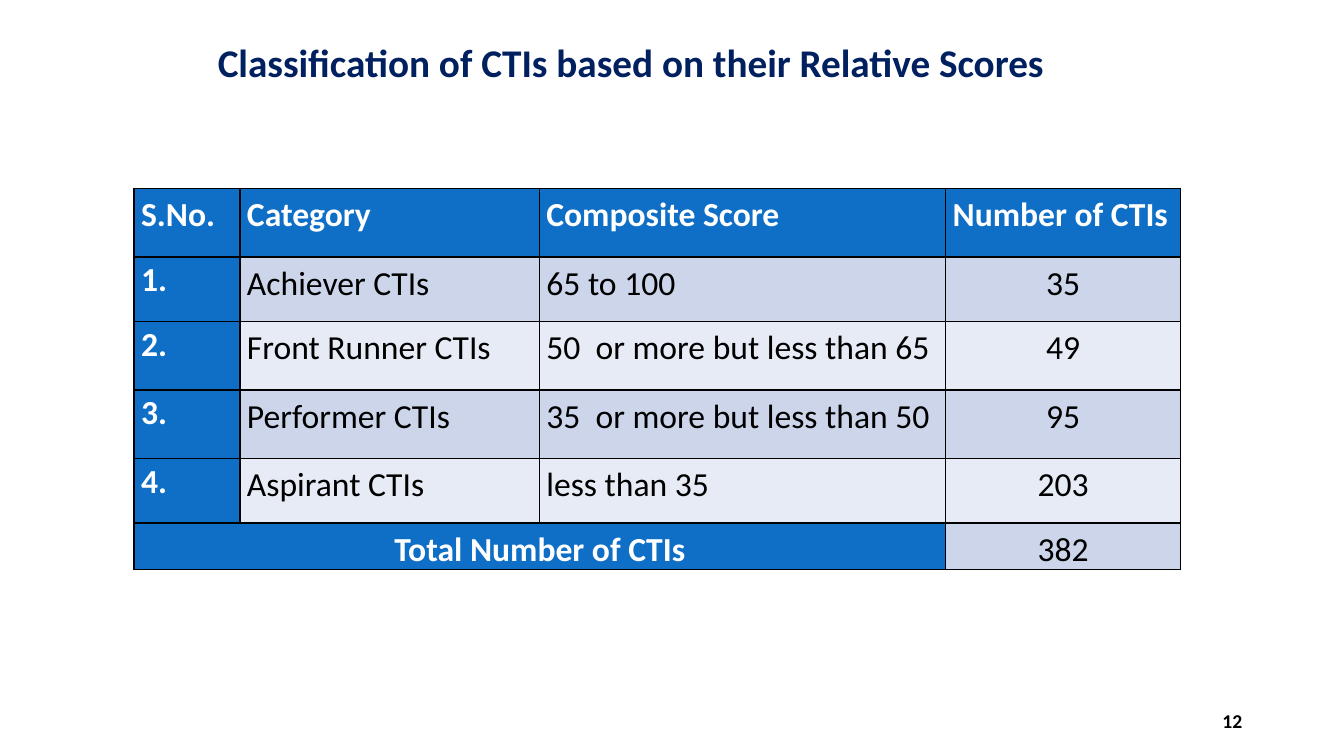
"""Build the slide that classifies CTIs by their relative scores."""
from dataclasses import dataclass

from lxml.etree import SubElement
from pptx import Presentation
from pptx.dml.color import RGBColor
from pptx.enum.text import MSO_ANCHOR as Anchor, MSO_AUTO_SIZE as AutoSize, PP_ALIGN as Align
from pptx.oxml.ns import qn
from pptx.slide import Slide
from pptx.table import _Cell as Cell
from pptx.text.text import TextFrame
from pptx.util import Pt

EMU_PER_PX = 9144


@dataclass(frozen=True)
class Theme:
    font: str = "Calibri"
    navy: str = "002060"
    blue: str = "0F6FC6"
    band_dark: str = "CCD5EA"
    band_light: str = "E7EBF5"
    white: str = "FFFFFF"
    black: str = "000000"
    title_size: int = 28
    table_size: int = 24
    number_size: int = 14
    border_width: int = 1


@dataclass(frozen=True)
class Category:
    number: str
    name: str
    score: str
    count: str


@dataclass(frozen=True)
class Label:
    text: str
    box: tuple[int, int, int, int]
    size: int
    color: str
    align: Align
    anchor: Anchor
    auto_size: AutoSize


THEME = Theme()
LABELS = (
    Label("Classification of CTIs based on their Relative Scores", (191, 33, 869, 57),
          THEME.title_size, THEME.navy, Align.CENTER, Anchor.TOP, AutoSize.SHAPE_TO_FIT_TEXT),
    Label("12", (942, 695, 300, 40),
          THEME.number_size, THEME.black, Align.RIGHT, Anchor.MIDDLE, AutoSize.NONE),
)
HEADINGS = ("S.No.", "Category", "Composite Score", "Number of CTIs")
CATEGORIES = (
    Category("1.", "Achiever CTIs", "65 to 100", "35"),
    Category("2.", "Front Runner CTIs", "50  or more but less than 65", "49"),
    Category("3.", "Performer CTIs", "35  or more but less than 50", "95"),
    Category("4.", "Aspirant CTIs", "less than 35", "203"),
)
COLUMN_WIDTHS = (105, 297, 403, 233)
ROW_HEIGHTS = (68, 64, 68, 68, 64, 46)
TABLE_LEFT, TABLE_TOP = 133, 187
CELL_MARGIN = 7


def px(length: int) -> int:
    return length * EMU_PER_PX


def write(frame: TextFrame, text: str, *, size: int, color: str, bold: bool = True,
          align: Align = Align.LEFT, line_spacing: float = 1.0, space_after: int = 0) -> None:
    paragraph = frame.paragraphs[0]
    paragraph.alignment = align
    paragraph.line_spacing = line_spacing
    paragraph.space_after = Pt(space_after)
    run = paragraph.add_run()
    run.text = text
    run.font.name = THEME.font
    run.font.size = Pt(size)
    run.font.bold = bold
    run.font.color.rgb = RGBColor.from_string(color)


def add_label(slide: Slide, label: Label) -> None:
    frame = slide.shapes.add_textbox(*map(px, label.box)).text_frame
    frame.word_wrap = True
    frame.auto_size = label.auto_size
    frame.vertical_anchor = label.anchor
    write(frame, label.text, size=label.size, color=label.color, align=label.align)


def style_cell(cell: Cell, fill: str) -> None:
    cell.margin_left = cell.margin_right = px(CELL_MARGIN)
    cell.margin_top = cell.margin_bottom = 0
    properties = cell._tc.get_or_add_tcPr()
    for side in ("a:lnL", "a:lnR", "a:lnT", "a:lnB"):
        line = SubElement(properties, qn(side), w=str(Pt(THEME.border_width)))
        SubElement(SubElement(line, qn("a:solidFill")), qn("a:srgbClr"), val=THEME.black)
    cell.fill.solid()
    cell.fill.fore_color.rgb = RGBColor.from_string(fill)


def fill_cell(cell: Cell, text: str, *, heading: bool = False, align: Align = Align.JUSTIFY,
              line_spacing: float = 1.15, space_after: int = 10) -> None:
    write(cell.text_frame, text, size=THEME.table_size, bold=heading, align=align,
          color=THEME.white if heading else THEME.black,
          line_spacing=line_spacing, space_after=space_after)


def add_score_table(slide: Slide) -> None:
    box = (TABLE_LEFT, TABLE_TOP, sum(COLUMN_WIDTHS), sum(ROW_HEIGHTS))
    rows, columns = len(ROW_HEIGHTS), len(COLUMN_WIDTHS)
    table = slide.shapes.add_table(rows, columns, *map(px, box)).table
    for column, width in zip(table.columns, COLUMN_WIDTHS):
        column.width = px(width)
    for row, height in zip(table.rows, ROW_HEIGHTS):
        row.height = px(height)

    total_row, count_column = rows - 1, columns - 1
    for row in range(rows):
        band = THEME.band_dark if row % 2 else THEME.band_light
        for column in range(columns):
            is_heading = (row == 0 or column == 0
                          or (row == total_row and column < count_column))
            style_cell(table.cell(row, column), THEME.blue if is_heading else band)

    for column, heading in enumerate(HEADINGS):
        fill_cell(table.cell(0, column), heading, heading=True,
                  align=Align.JUSTIFY if column else Align.LEFT)
    for row, category in enumerate(CATEGORIES, start=1):
        fill_cell(table.cell(row, 0), category.number, heading=True, align=Align.LEFT,
                  line_spacing=1.07, space_after=0)
        fill_cell(table.cell(row, 1), category.name)
        fill_cell(table.cell(row, 2), category.score)
        fill_cell(table.cell(row, count_column), category.count, align=Align.CENTER)

    total = table.cell(total_row, 0)
    total.merge(table.cell(total_row, count_column - 1))
    fill_cell(total, "Total Number of CTIs", heading=True, align=Align.CENTER)
    fill_cell(table.cell(total_row, count_column), "382", align=Align.CENTER)


def main() -> None:
    presentation = Presentation()
    presentation.slide_width, presentation.slide_height = px(1333), px(750)
    slide = presentation.slides.add_slide(presentation.slide_layouts[6])
    for label in LABELS:
        add_label(slide, label)
    add_score_table(slide)
    presentation.save("out.pptx")


if __name__ == "__main__":
    main()
